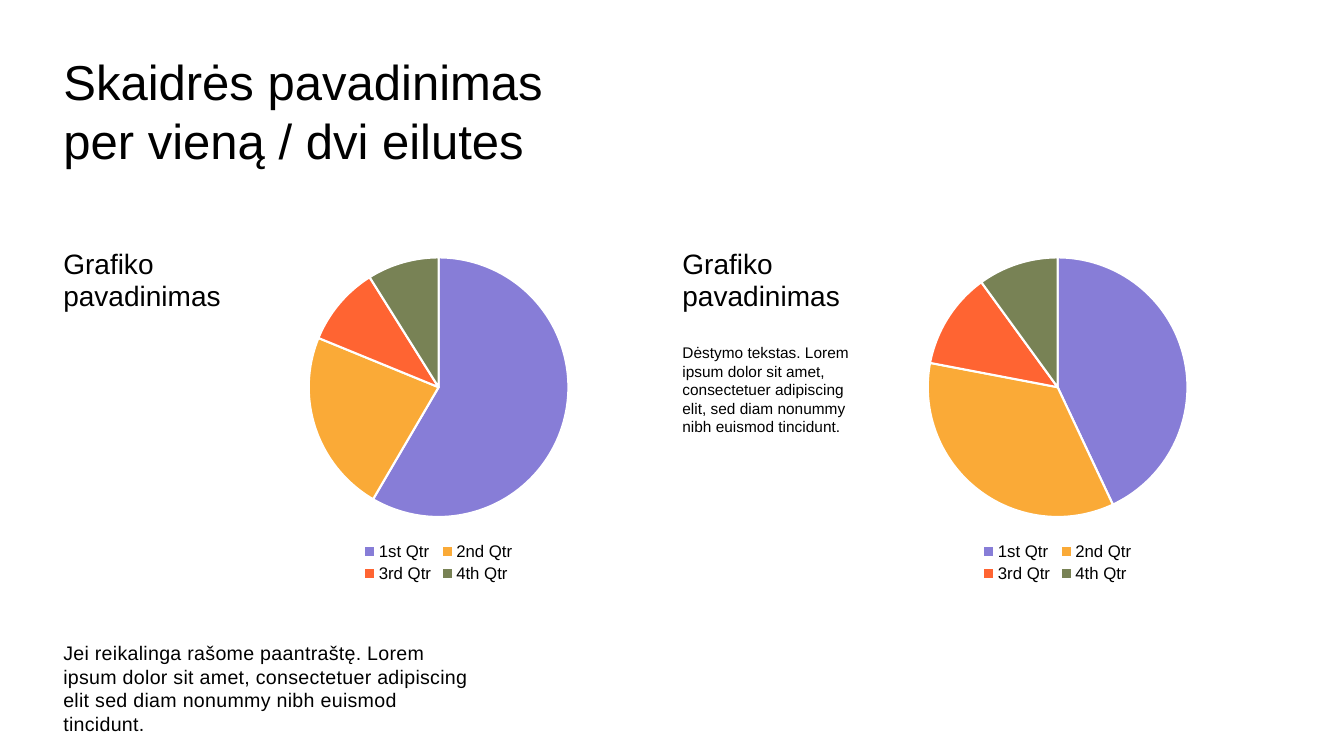
import pptx
import pptx.chart.data
import pptx.dml.color
import pptx.enum.chart
import pptx.util
from lxml import etree

Inches = pptx.util.Inches
Pt = pptx.util.Pt
RGBColor = pptx.dml.color.RGBColor

BLACK = RGBColor(0x00, 0x00, 0x00)
WHITE = RGBColor(0xFF, 0xFF, 0xFF)
VIOLET = RGBColor(0x87, 0x7D, 0xD7)
AMBER = RGBColor(0xFA, 0xAA, 0x37)
ORANGE = RGBColor(0xFF, 0x64, 0x32)
OLIVE = RGBColor(0x78, 0x82, 0x55)
SLICES = (VIOLET, AMBER, ORANGE, OLIVE)

QUARTERS = ("1st Qtr", "2nd Qtr", "3rd Qtr", "4th Qtr")
LEFT, RIGHT = 0.53, 6.67
TOP = 2.41


class Page:
    font = "Arial"
    color = BLACK

    def __init__(self, slide):
        self.slide = slide

    def style(self, font, size):
        font.name = self.font
        font.size = Pt(size)
        font.color.rgb = self.color

    def text(self, words, x, y, w, h, size, line, track=0):
        """Add a wrapped text box; line and track are in points."""
        box = self.slide.shapes.add_textbox(
            Inches(x), Inches(y), Inches(w), Inches(h))
        frame = box.text_frame
        frame.word_wrap = True
        para = frame.paragraphs[0]
        run = para.add_run()
        run.text = words
        para.line_spacing = Pt(line)
        self.style(para.font, size)
        if track:
            run.font._element.set("spc", str(round(track * 100)))

    def pie(self, values, x, y, w, h):
        data = pptx.chart.data.CategoryChartData()
        data.categories = QUARTERS
        data.add_series("Series 1", values)
        chart = self.slide.shapes.add_chart(
            pptx.enum.chart.XL_CHART_TYPE.PIE,
            Inches(x), Inches(y), Inches(w), Inches(h), data).chart
        self.style(chart.font, 10)
        chart.has_title = False
        chart.has_legend = True
        chart.legend.position = pptx.enum.chart.XL_LEGEND_POSITION.BOTTOM
        chart.legend.include_in_layout = False
        self.style(chart.legend.font, 12)
        plot = chart.plots[0]
        plot.vary_by_categories = True
        for i, color in enumerate(SLICES):
            form = plot.series[0].points[i].format
            form.fill.solid()
            form.fill.fore_color.rgb = color
            form.line.color.rgb = WHITE
            form.line.width = Pt(1.5)
        self.place(chart)

    def place(self, chart):
        """Fix the inner plot area as shares of the chart frame."""
        area = chart._chartSpace.chart.plotArea
        ns = "{%s}" % area.nsmap["c"]
        for old in area.findall(ns + "layout"):
            area.remove(old)
        layout = etree.Element(ns + "layout")
        area.insert(0, layout)
        manual = etree.SubElement(layout, ns + "manualLayout")
        for tag, val in (("layoutTarget", "inner"),
                         ("xMode", "edge"), ("yMode", "edge"),
                         ("x", "0.1"), ("y", "0.04"),
                         ("w", "0.8"), ("h", "0.76")):
            etree.SubElement(manual, ns + tag).set("val", val)


def main():
    deck = pptx.Presentation()
    deck.slide_width = Inches(13.33)
    deck.slide_height = Inches(7.5)
    page = Page(deck.slides.add_slide(deck.slide_layouts[6]))

    page.text("Skaidrės pavadinimas per vieną / dvi eilutes",
              LEFT, 0.46, 5.35, 1.38, 35, 42)
    page.text("Jei reikalinga rašome paantraštę. Lorem ipsum dolor sit amet, "
              "consectetuer adipiscing elit sed diam nonummy nibh euismod "
              "tincidunt.", LEFT, 6.31, 4.37, 0.94, 14, 16.8, 0.2)
    for x, values in ((LEFT, (59, 23, 10, 9)), (RIGHT, (43, 35, 12, 10))):
        page.text("Grafiko pavadinimas", x, TOP, 1.94, 0.78, 20, 23)
        page.pie(values, x + 2.21, TOP, 3.22, 3.41)
    page.text("Dėstymo tekstas. Lorem ipsum dolor sit amet, consectetuer "
              "adipiscing elit, sed diam nonummy nibh euismod tincidunt.",
              RIGHT, 3.36, 1.94, 1.1, 11, 13.2)
    deck.save("out.pptx")


if __name__ == "__main__":
    main()
